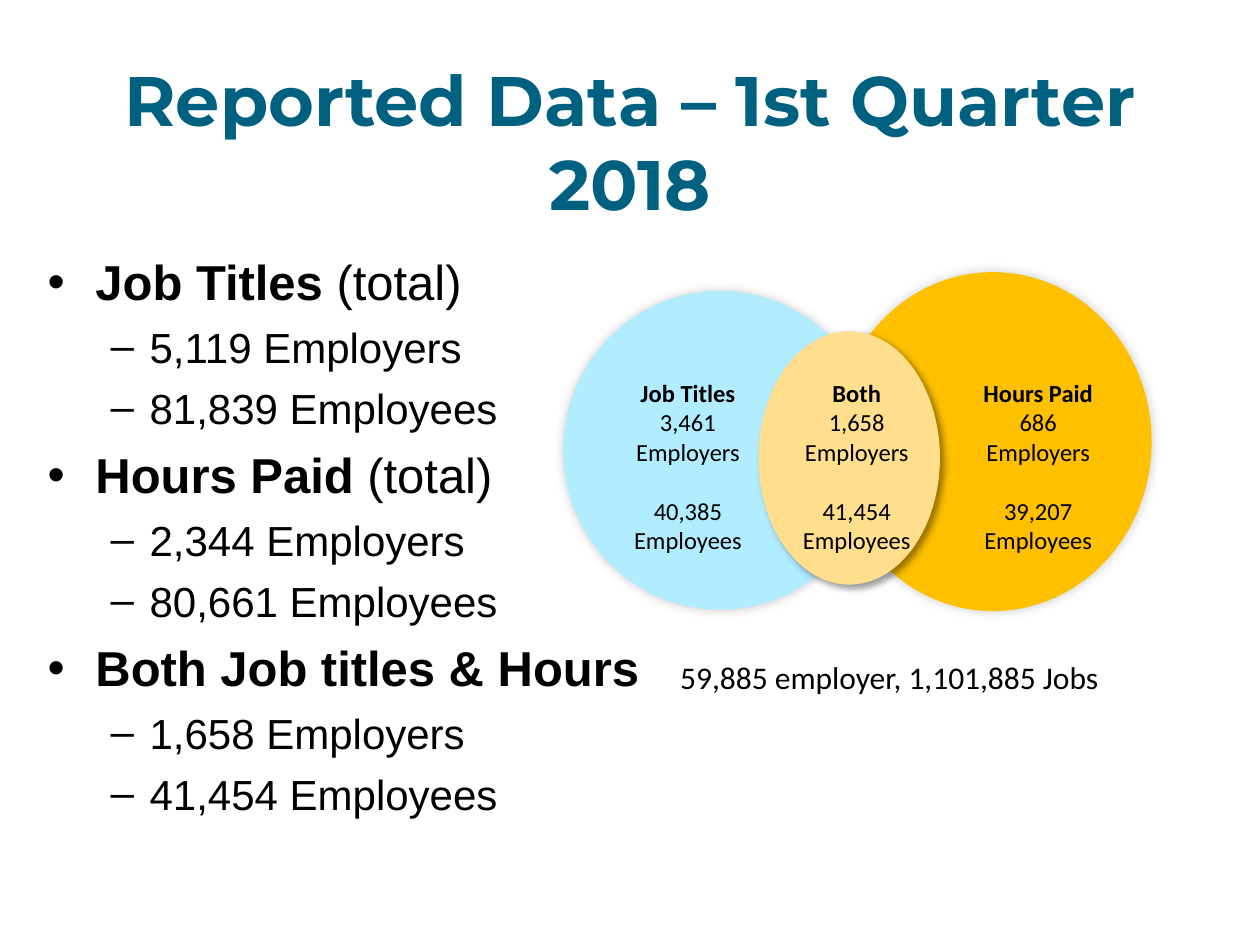
from dataclasses import dataclass
from lxml.etree import SubElement
from pptx import Presentation
from pptx.dml.color import RGBColor
from pptx.enum.shapes import MSO_SHAPE as Shape
from pptx.enum.text import PP_ALIGN as Align
from pptx.oxml.ns import qn
from pptx.util import Inches, Pt


@dataclass(frozen=True)
class Theme:
    heading: str = "00607F"
    ink: str = "000000"
    titles: str = "B2ECFF"
    hours: str = "FFC000"
    both: str = "FFDE8E"
    heading_font: str = "Montserrat"
    body_font: str = "Arial"
    label_font: str = "Calibri"
    heading_size: int = 40
    topic_size: int = 28
    detail_size: int = 24
    label_size: int = 14
    total_size: int = 18


THEME = Theme()

TOPICS = [
    ("Job Titles", " (total)", ["5,119 Employers", "81,839 Employees"]),
    ("Hours Paid", " (total)", ["2,344 Employers", "80,661 Employees"]),
    ("Both Job titles & Hours", "", ["1,658 Employers", "41,454 Employees"]),
]

CIRCLES = [
    ((0, 0.15, 2.49, 2.53), THEME.titles, (20, 6, 0, 225)),
    ((2.15, 0, 2.52, 2.69), THEME.hours, (20, 6, 0, 315)),
    ((1.55, 0.47, 1.44, 2.01), THEME.both, (40, 4, 3, 45)),
]

LABELS = [
    (0.42, "Job Titles", "3,461", "40,385"),
    (1.76, "Both", "1,658", "41,454"),
    (3.2, "Hours Paid", "686", "39,207"),
]


def add_text_box(page, left, top, width, height):
    box = page.shapes.add_textbox(
        Inches(left), Inches(top), Inches(width), Inches(height))
    box.text_frame.word_wrap = True
    return box.text_frame


def next_para(frame):
    first = frame.paragraphs[0]
    return frame.add_paragraph() if first.runs else first


def style(para, font, size, color=THEME.ink, bold=None):
    para.font.name = font
    para.font.size = Pt(size)
    para.font.color.rgb = RGBColor.from_string(color)
    para.font.bold = bold


def add_span(para, text, bold=None):
    span = para.add_run()
    span.text = text
    span.font.bold = bold


def set_bullet(para, symbol, margin, hanging):
    props = para._p.get_or_add_pPr()
    props.set("marL", str(Inches(margin)))
    props.set("indent", str(-Inches(hanging)))
    SubElement(props, qn("a:buFont"), typeface=THEME.body_font)
    SubElement(props, qn("a:buChar"), char=symbol)


def set_shadow(shape, opacity, blur, distance, angle):
    shape.shadow.inherit = False
    effects = shape._element.spPr.find(qn("a:effectLst"))
    shadow = SubElement(
        effects, qn("a:outerShdw"), blurRad=str(Pt(blur)),
        dist=str(Pt(distance)), dir=str(angle * 60000),
        algn="ctr", rotWithShape="0")
    color = SubElement(shadow, qn("a:srgbClr"), val=THEME.ink)
    SubElement(color, qn("a:alpha"), val=str(opacity * 1000))


def add_title(page, left, top, width, height):
    para = add_text_box(page, left, top, width, height).paragraphs[0]
    para.alignment = Align.CENTER
    add_span(para, "Reported Data – 1st Quarter 2018")
    style(para, THEME.heading_font, THEME.heading_size, THEME.heading, True)


def add_topics(page, left, top, width, height):
    frame = add_text_box(page, left, top, width, height)
    for number, (topic, suffix, details) in enumerate(TOPICS):
        para = next_para(frame)
        set_bullet(para, "•", 0.38, 0.38)
        if number:
            para.space_before = Pt(7)
        add_span(para, topic, True)
        if suffix:
            add_span(para, suffix)
        style(para, THEME.body_font, THEME.topic_size)
        for detail in details:
            para = next_para(frame)
            para.level = 1
            set_bullet(para, "–", 0.81, 0.31)
            para.space_before = Pt(6)
            add_span(para, detail)
            style(para, THEME.body_font, THEME.detail_size)


def add_venn(page, left, top):
    for (dx, dy, width, height), color, shadow in CIRCLES:
        circle = page.shapes.add_shape(
            Shape.OVAL, Inches(left + dx), Inches(top + dy),
            Inches(width), Inches(height))
        circle.fill.solid()
        circle.fill.fore_color.rgb = RGBColor.from_string(color)
        circle.line.fill.background()
        set_shadow(circle, *shadow)
    for dx, name, employers, employees in LABELS:
        frame = add_text_box(page, left + dx, top + 0.79, 1.14, 1.68)
        lines = [name, employers, "Employers", employees, "Employees"]
        for line in lines:
            para = next_para(frame)
            para.alignment = Align.CENTER
            if line == employees:
                para.space_before = Pt(17)
            add_span(para, line)
            style(para, THEME.label_font, THEME.label_size, bold=line == name)


def add_total(page, left, top, width, height):
    para = add_text_box(page, left, top, width, height).paragraphs[0]
    add_span(para, "59,885 employer, 1,101,885 Jobs")
    style(para, THEME.label_font, THEME.total_size)


def main():
    deck = Presentation()
    deck.slide_width, deck.slide_height = Inches(10), Inches(7.5)
    page = deck.slides.add_slide(deck.slide_layouts[6])
    add_title(page, 0.69, 0.4, 8.62, 1.35)
    add_topics(page, 0.28, 1.95, 9.36, 4.62)
    add_venn(page, 4.47, 2.16)
    add_total(page, 5.3, 5.17, 3.85, 0.4)
    deck.save("out.pptx")


if __name__ == "__main__":
    main()
